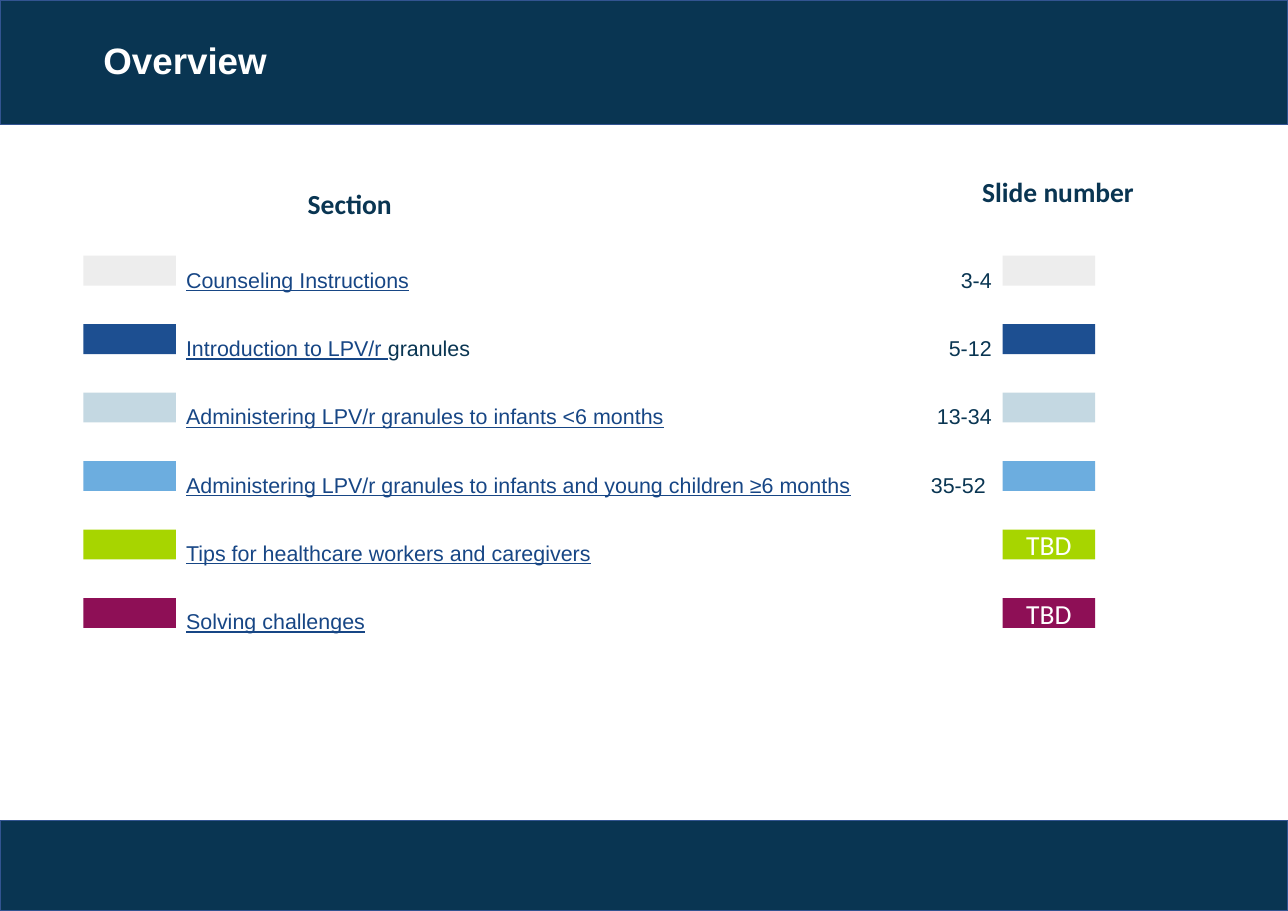
import pptx
import pptx.util
import pptx.dml.color
import pptx.enum.shapes
import pptx.enum.text

Pt = pptx.util.Pt
ALIGN = pptx.enum.text.PP_ALIGN
ANCHOR = pptx.enum.text.MSO_ANCHOR

COLOURS = {
    "navy": "093552", "border": "325491", "link": "174685", "white": "FFFFFF",
    "grey": "EDEDED", "blue": "1D4F91", "mist": "C4D8E2",
    "sky": "6CADDF", "lime": "A7D500", "plum": "8E0F56",
}

TITLE = "Overview"
HEADINGS = [("Section", 114.5, 118.8), ("Slide number", 577.4, 110.9)]
# colour, linked words, plain words, slide numbers, swatch label
SECTIONS = [
    ("grey", "Counseling Instructions", "", "3-4", ""),
    ("blue", "Introduction to LPV/r ", "granules", "5-12", ""),
    ("mist", "Administering LPV/r granules to infants <6 months", "", "13-34", ""),
    ("sky", "Administering LPV/r granules to infants and young children ≥6 months",
     "", "35-52 ", ""),
    ("lime", "Tips for healthcare workers and caregivers", "", "", "TBD"),
    ("plum", "Solving challenges", "", "", "TBD"),
]

SLIDE_WIDTH, SLIDE_HEIGHT = 841.68, 595.44
HEADER_HEIGHT, FOOTER_HEIGHT = 81.5, 59
SWATCH_WIDTH, SWATCH_HEIGHT = 60.5, 19.5
SWATCH_TOP, SWATCH_PITCH = 167.2, 44.75
SWATCH_LEFTS = (54.5, 655.2)
LIST_TOP = 154.1

BODY = {"name": "Arial", "size": Pt(14)}
HEADING = {"name": "Calibri", "size": Pt(18), "bold": True}
TITLE_FONT = {"name": "Arial", "size": Pt(24), "bold": True}
LABEL = {"name": "Calibri", "size": Pt(18)}
LINE_FORMAT = {"line_spacing": 2.0}


def colour(name):
    return pptx.dml.color.RGBColor.from_string(COLOURS[name])


def set_all(target, values):
    for name, value in values.items():
        setattr(target, name, value)


def add_run(paragraph, text, font, colour_name):
    run = paragraph.add_run()
    run.text = text
    set_all(run.font, font)
    run.font.color.rgb = colour(colour_name)


def add_rectangle(slide, left, top, width, height, fill, border=None):
    shape = slide.shapes.add_shape(pptx.enum.shapes.MSO_SHAPE.RECTANGLE,
                                   Pt(left), Pt(top), Pt(width), Pt(height))
    shape.shadow.inherit = False
    shape.fill.solid()
    shape.fill.fore_color.rgb = colour(fill)
    if border:
        shape.line.color.rgb = colour(border)
        shape.line.width = Pt(1)
    else:
        shape.line.fill.background()
    return shape


def add_text(slide, left, top, width, height, anchor=ANCHOR.TOP):
    box = slide.shapes.add_textbox(Pt(left), Pt(top), Pt(width), Pt(height))
    set_all(box.text_frame, {"word_wrap": True, "vertical_anchor": anchor})
    return box.text_frame


def add_list(frame, lines, alignment):
    """Write one paragraph per line; a line is a list of (text, font, colour)."""
    for index, runs in enumerate(lines):
        paragraph = frame.add_paragraph() if index else frame.paragraphs[0]
        set_all(paragraph, {**LINE_FORMAT, "alignment": alignment,
                            "space_before": Pt(11 if index else 0)})
        for run in runs:
            add_run(paragraph, *run)


def main():
    presentation = pptx.Presentation()
    presentation.slide_width, presentation.slide_height = Pt(SLIDE_WIDTH), Pt(SLIDE_HEIGHT)
    slide = presentation.slides.add_slide(presentation.slide_layouts[6])

    for top, height in ((0, HEADER_HEIGHT), (SLIDE_HEIGHT - FOOTER_HEIGHT, FOOTER_HEIGHT)):
        add_rectangle(slide, 0, top, SLIDE_WIDTH, height, "navy", "border")

    title = add_text(slide, 60.5, 0, 723.6, HEADER_HEIGHT, ANCHOR.MIDDLE).paragraphs[0]
    title.line_spacing = 0.9
    add_run(title, TITLE, TITLE_FONT, "white")

    for text, left, top in HEADINGS:
        heading = add_text(slide, left, top, 228.2, 30.2).paragraphs[0]
        heading.alignment = ALIGN.CENTER
        add_run(heading, text, HEADING, "navy")

    section_lines, number_lines = [], []
    for row, (fill, linked, plain, numbers, label) in enumerate(SECTIONS):
        section_lines.append([(linked, {**BODY, "underline": True}, "link")])
        if plain:
            section_lines[-1].append((plain, BODY, "navy"))
        if numbers:
            number_lines.append([(numbers, BODY, "navy")])
        top = SWATCH_TOP + row * SWATCH_PITCH
        for left in SWATCH_LEFTS:
            swatch = add_rectangle(slide, left, top, SWATCH_WIDTH, SWATCH_HEIGHT, fill)
        if label:
            swatch.text_frame.vertical_anchor = ANCHOR.MIDDLE
            paragraph = swatch.text_frame.paragraphs[0]
            paragraph.alignment = ALIGN.CENTER
            add_run(paragraph, label, LABEL, "white")

    add_list(add_text(slide, 114.5, LIST_TOP, 576.7, 289.4), section_lines, ALIGN.LEFT)
    add_list(add_text(slide, 510.5, LIST_TOP, 144.7, 378), number_lines, ALIGN.RIGHT)

    presentation.save("out.pptx")


if __name__ == "__main__":
    main()
